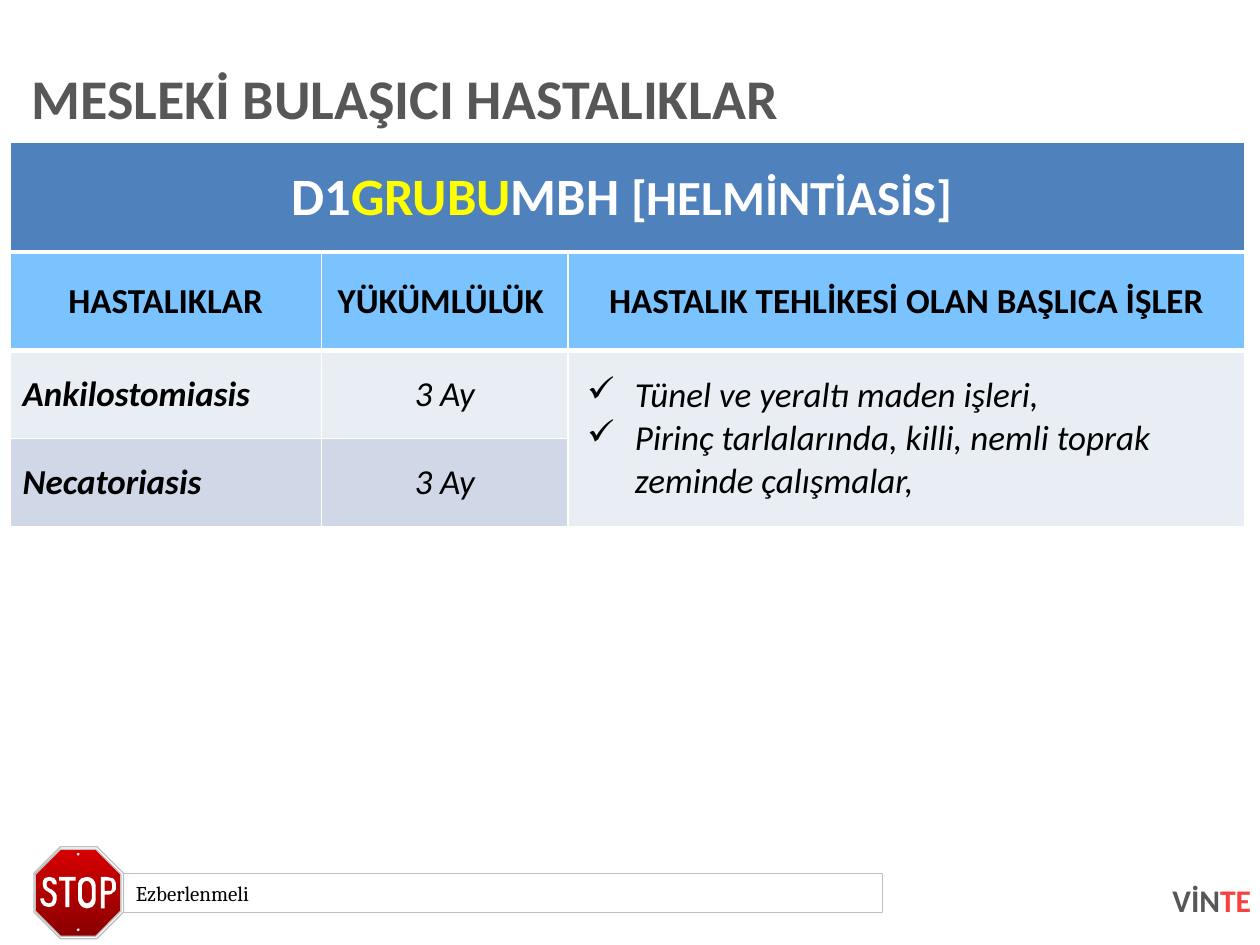
from dataclasses import dataclass

from lxml import etree
from pptx import Presentation
from pptx.dml.color import RGBColor
from pptx.enum.shapes import MSO_SHAPE
from pptx.enum.text import MSO_ANCHOR, MSO_AUTO_SIZE, PP_ALIGN
from pptx.oxml.ns import qn
from pptx.util import Inches, Pt

LEFT, CENTER, RIGHT = PP_ALIGN.LEFT, PP_ALIGN.CENTER, PP_ALIGN.RIGHT
MIDDLE, TOP = MSO_ANCHOR.MIDDLE, MSO_ANCHOR.TOP
NO_FIT = MSO_AUTO_SIZE.NONE
RECT, OVAL = MSO_SHAPE.RECTANGLE, MSO_SHAPE.OVAL


@dataclass(frozen=True)
class Theme:
    font: str = "Calibri"
    note_font: str = "Cambria"
    gray: str = "575757"
    red: str = "FB3E3E"
    black: str = "000000"
    white: str = "FFFFFF"
    yellow: str = "FFFF00"
    banner: str = "4F81BD"
    header: str = "7AC3FF"
    bands: tuple = ("E9EDF4", "D0D8E8")
    sign: tuple = ("D60000", "8A0000")
    edge: str = "C0C0C0"
    rivet: str = "E4E4E4"
    title: int = 32
    group: int = 30
    subgroup: int = 28
    body: int = 20
    brand: int = 18
    note: int = 12


T = Theme()
HEAD = dict(size=T.body, color=T.black, bold=True)
NAME = dict(HEAD, italic=True)
TEXT = dict(NAME, bold=False)

LETTERS = {
    "S": [[(0.42, 7.02), (0.45, 7.02), (0.45, 7.02, 0.46, 6.96, 0.39, 6.96),
           (0.33, 6.96, 0.34, 7.02, 0.34, 7.02), (0.34, 7.07, 0.38, 7.07, 0.4, 7.09),
           (0.41, 7.1, 0.42, 7.11, 0.42, 7.13), (0.42, 7.16, 0.4, 7.17, 0.39, 7.17),
           (0.37, 7.17, 0.35, 7.16, 0.35, 7.13), (0.32, 7.13),
           (0.32, 7.13, 0.32, 7.2, 0.39, 7.2), (0.45, 7.2, 0.45, 7.14, 0.45, 7.13),
           (0.45, 7.12, 0.46, 7.09, 0.41, 7.06), (0.38, 7.05, 0.37, 7.04, 0.37, 7.02),
           (0.37, 7, 0.38, 6.99, 0.39, 6.99), (0.4, 6.99, 0.42, 7, 0.42, 7.02)]],
    "T": [[(0.52, 7.2), (0.52, 6.99), (0.47, 6.99), (0.47, 6.96),
           (0.6, 6.96), (0.6, 6.99), (0.55, 6.99), (0.55, 7.2)]],
    "O": [[(0.69, 6.96), (0.62, 6.96, 0.62, 7.02, 0.62, 7.02), (0.62, 7.14),
           (0.62, 7.14, 0.63, 7.21, 0.69, 7.21), (0.76, 7.21, 0.76, 7.14, 0.76, 7.14),
           (0.76, 7.03), (0.76, 6.99, 0.73, 6.96, 0.69, 6.96)],
          [(0.73, 7.12), (0.73, 7.12, 0.73, 7.17, 0.69, 7.17),
           (0.66, 7.17, 0.65, 7.12, 0.65, 7.12), (0.65, 7.04),
           (0.65, 7.04, 0.65, 6.99, 0.69, 6.99), (0.71, 6.99, 0.73, 7.02, 0.73, 7.05)]],
    "P": [[(0.91, 6.99), (0.91, 6.98, 0.9, 6.97, 0.89, 6.97), (0.85, 6.96), (0.8, 6.96),
           (0.8, 7.21), (0.83, 7.21), (0.83, 7.1), (0.85, 7.1),
           (0.87, 7.1, 0.88, 7.1, 0.89, 7.09), (0.9, 7.08),
           (0.91, 7.08, 0.91, 7.07, 0.92, 7.06), (0.92, 7.03),
           (0.92, 7.01, 0.92, 7, 0.91, 6.99)],
          [(0.88, 7.07), (0.83, 7.07), (0.83, 6.99), (0.87, 6.99),
           (0.88, 6.99, 0.89, 7, 0.89, 7.03), (0.89, 7.03, 0.89, 7.07, 0.88, 7.07)]],
}


def rgb(value):
    return RGBColor.from_string(value)


def set_attrs(obj, **values):
    for name, value in values.items():
        setattr(obj, name, value)


def add_runs(p, runs, align=LEFT):
    p.alignment = align
    for text, style in runs:
        r = p.add_run()
        r.text = text
        values = dict(style)
        r.font.color.rgb = rgb(values.pop("color"))
        values["size"] = Pt(values["size"])
        set_attrs(r.font, **{"name": T.font, **values})


def format_frame(tf, anchor, x=0, y=0):
    set_attrs(tf, word_wrap=True, auto_size=NO_FIT, vertical_anchor=anchor,
              margin_left=Inches(x), margin_right=Inches(x),
              margin_top=Inches(y), margin_bottom=Inches(y))


def add_title(s, text):
    sp = s.shapes.title
    set_attrs(sp, left=Inches(0.25), top=Inches(0.45),
              width=Inches(9.64), height=Inches(0.71))
    format_frame(sp.text_frame, MIDDLE, y=0.05)
    p = sp.text_frame.paragraphs[0]
    p.line_spacing = 0.9
    add_runs(p, [(text, dict(size=T.title, color=T.gray, bold=True))])


def add_check(p):
    pPr = p._p.get_or_add_pPr()
    pPr.set("marL", str(Inches(0.53)))
    pPr.set("indent", str(Inches(-0.38)))
    etree.SubElement(pPr, qn("a:buChar"), char="✓")


def set_borders(cell, top, bottom):
    tcPr = cell._tc.get_or_add_tcPr()
    for side, width in zip("LRTB", (1, 1, top, bottom)):
        ln = etree.SubElement(tcPr, qn(f"a:ln{side}"), w=str(Pt(width)))
        fill = etree.SubElement(ln, qn("a:solidFill"))
        etree.SubElement(fill, qn("a:srgbClr"), val=T.white)


def fill_cell(cell, runs, align=CENTER):
    add_runs(cell.text_frame.paragraphs[0], runs, align)


def add_disease_table(s, banner, headers, diseases, jobs):
    widths, heights = (2.47, 1.96, 5.37), (0.87, 0.78, 0.7, 0.7)
    table = s.shapes.add_table(len(heights), len(widths), Inches(0.08), Inches(1.13),
                               Inches(sum(widths)), Inches(sum(heights))).table
    for col, width in zip(table.columns, widths):
        col.width = Inches(width)
    fills = (T.banner, T.header, *T.bands)
    rules = ((1, 3), (3, 3), (3, 1), (1, 1))
    for row, height, fill, rule in zip(table.rows, heights, fills, rules):
        row.height = Inches(height)
        for cell in row.cells:
            set_borders(cell, *rule)
            cell.fill.solid()
            cell.fill.fore_color.rgb = rgb(fill)
            cell.vertical_anchor = MIDDLE
    table.cell(0, 0).merge(table.cell(0, 2))
    table.cell(2, 2).merge(table.cell(3, 2))

    fill_cell(table.cell(0, 0), banner)
    for i, text in enumerate(headers):
        fill_cell(table.cell(1, i), [(text, HEAD)])
    for i, (name, duty) in enumerate(diseases, 2):
        fill_cell(table.cell(i, 0), [(name, NAME)], LEFT)
        fill_cell(table.cell(i, 1), [(duty, TEXT)])
    cell = table.cell(2, 2)
    set_attrs(cell, margin_left=0, margin_right=0, margin_top=0, margin_bottom=0)
    tf = cell.text_frame
    for i, job in enumerate(jobs):
        p = tf.add_paragraph() if i else tf.paragraphs[0]
        add_check(p)
        add_runs(p, [(job, TEXT)])


def flatten(contour):
    points = [contour[0]]
    for seg in contour[1:]:
        if len(seg) == 2:
            points.append(seg)
            continue
        knots = (points[-1], seg[:2], seg[2:4], seg[4:])
        for t in (0.25, 0.5, 0.75, 1):
            weights = ((1 - t) ** 3, 3 * t * (1 - t) ** 2, 3 * t * t * (1 - t), t ** 3)
            points.append(tuple(sum(w * k[a] for w, k in zip(weights, knots))
                                for a in (0, 1)))
    return [(Inches(x), Inches(y)) for x, y in points]


def style_shape(sp, fill=None, line=None, width=0.75):
    sp.shadow.inherit = False
    if fill is None:
        sp.fill.background()
    elif isinstance(fill, tuple):
        sp.fill.gradient()
        sp.fill.gradient_angle = 270
        for stop, color in zip(sp.fill.gradient_stops, fill):
            stop.color.rgb = rgb(color)
    else:
        sp.fill.solid()
        sp.fill.fore_color.rgb = rgb(fill)
    if line:
        sp.line.color.rgb = rgb(line)
        sp.line.width = Pt(width)
    else:
        sp.line.fill.background()


def add_outline(shapes, contours, fill, line=None):
    first, *others = [flatten(c) for c in contours]
    builder = shapes.build_freeform(*first[0], scale=1.0)
    builder.add_line_segments(first[1:], close=True)
    for points in others:
        builder.move_to(*points[0])
        builder.add_line_segments(points[1:], close=True)
    style_shape(builder.convert_to_shape(), fill, line)


def octagon(x, y, w, h, cut):
    r, b = x + w, y + h
    return [(x + cut, b), (x, b - cut), (x, y + cut), (x + cut, y),
            (r - cut, y), (r, y + cut), (r, b - cut), (r - cut, b)]


def add_stop_sign(s):
    shapes = s.shapes.add_group_shape().shapes
    add_outline(shapes, [octagon(0.27, 6.72, 0.71, 0.73, 0.21)], T.white, T.edge)
    add_outline(shapes, [octagon(0.28, 6.74, 0.68, 0.69, 0.2)], T.sign, T.edge)
    for contours in LETTERS.values():
        add_outline(shapes, contours, T.white)
    for y in (6.77, 7.37):
        for x, size, fill in ((0.61, 0.02, T.rivet), (0.62, 0.01, T.white)):
            sp = shapes.add_shape(OVAL, Inches(x), Inches(y), Inches(size), Inches(size))
            style_shape(sp, fill)


def add_note(s, text):
    sp = s.shapes.add_shape(RECT, Inches(0.98), Inches(6.93), Inches(6.02), Inches(0.31))
    style_shape(sp, line="BFBFBF", width=0.25)
    format_frame(sp.text_frame, MIDDLE, 0.1, 0.05)
    add_runs(sp.text_frame.paragraphs[0],
             [(text, dict(size=T.note, color=T.black, name=T.note_font))])


def add_brand(s, start, end):
    tf = s.shapes.add_textbox(Inches(9.27), Inches(6.99), Inches(0.66),
                              Inches(0.56)).text_frame
    format_frame(tf, TOP)
    style = dict(size=T.brand, color=T.gray, bold=True)
    add_runs(tf.paragraphs[0], [(start, style), (end, dict(style, color=T.red))], RIGHT)


def main():
    prs = Presentation()
    prs.slide_width, prs.slide_height = Inches(10), Inches(7.5)
    s = prs.slides.add_slide(prs.slide_layouts[5])
    add_title(s, "MESLEKİ BULAŞICI HASTALIKLAR")
    group = dict(size=T.group, color=T.white, bold=True)
    add_disease_table(
        s,
        [("D1", group), ("GRUBU", dict(group, color=T.yellow)), ("MBH ", group),
         ("[HELMİNTİASİS] ", dict(group, size=T.subgroup))],
        ["HASTALIKLAR", "YÜKÜMLÜLÜK ", "HASTALIK TEHLİKESİ OLAN BAŞLICA İŞLER"],
        [("Ankilostomiasis", "3 Ay"), ("Necatoriasis", "3 Ay")],
        ["Tünel ve yeraltı maden işleri,",
         "Pirinç tarlalarında, killi, nemli toprak zeminde çalışmalar,"])
    add_stop_sign(s)
    add_note(s, "Ezberlenmeli")
    add_brand(s, "VİN", "TE")
    prs.save("out.pptx")


if __name__ == "__main__":
    main()
